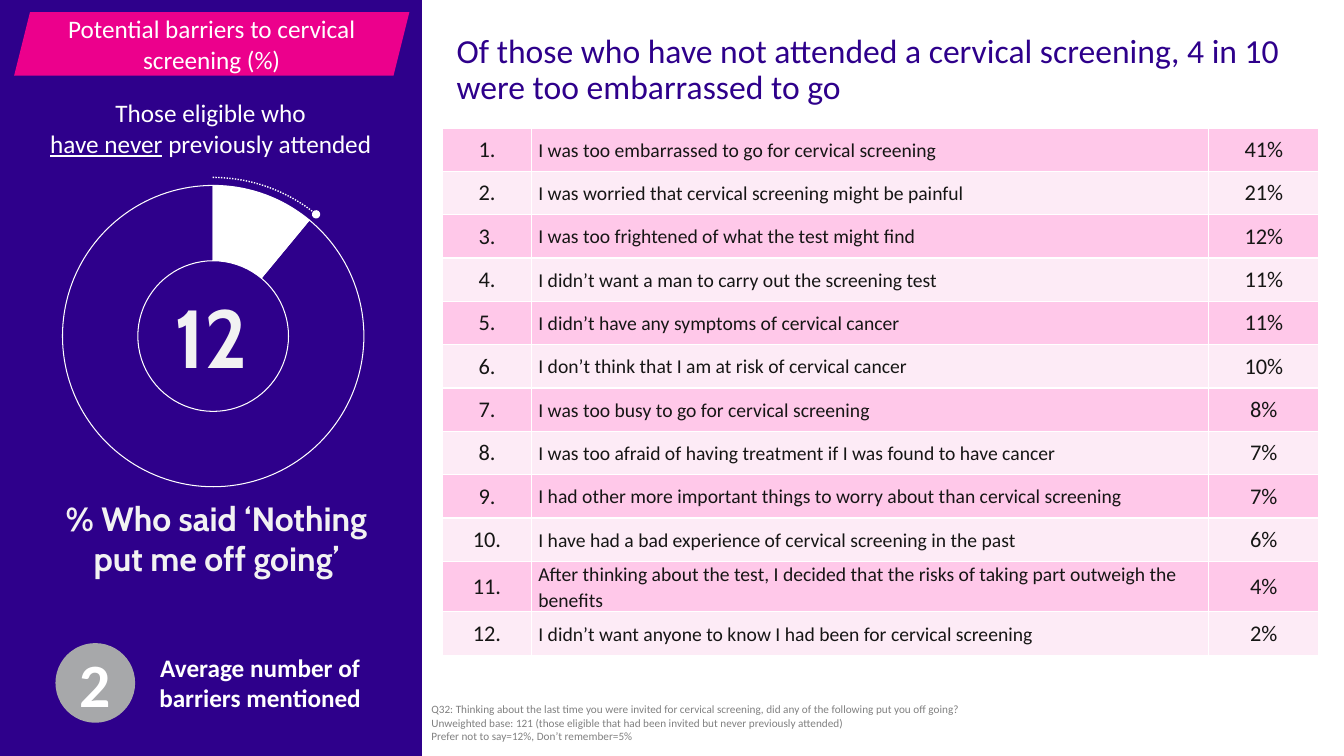
from lxml import etree
from pptx import Presentation
from pptx.chart.data import CategoryChartData
from pptx.dml.color import RGBColor
from pptx.enum.chart import XL_CHART_TYPE
from pptx.enum.dml import MSO_LINE
from pptx.enum.shapes import MSO_SHAPE
from pptx.enum.text import MSO_ANCHOR, MSO_AUTO_SIZE, PP_ALIGN
from pptx.oxml import parse_xml
from pptx.oxml.ns import nsdecls, qn
from pptx.util import Inches, Pt

PURPLE, PINK, GREY, WHITE = "2E008B", "EC008C", "A7A8AA", "FFFFFF"
OFF_WHITE, INK, NOTE_GREY = "F2F2F2", "161615", "808080"
ROW_FILLS = ["FFC8E9", "FDEBF6"]

TITLE = "Of those who have not attended a cervical screening, 4 in 10 were too embarrassed to go"
NOTES = [
    "Q32: Thinking about the last time you were invited for cervical screening, did any of the following put you off going?",
    "Unweighted base: 121 (those eligible that had been invited but never previously attended)",
    "Prefer not to say=12%, Don’t remember=5%",
]
BARRIERS = [
    ("I was too embarrassed to go for cervical screening", "41%"),
    ("I was worried that cervical screening might be painful", "21%"),
    ("I was too frightened of what the test might find", "12%"),
    ("I didn’t want a man to carry out the screening test", "11%"),
    ("I didn’t have any symptoms of cervical cancer", "11%"),
    ("I don’t think that I am at risk of cervical cancer", "10%"),
    ("I was too busy to go for cervical screening", "8%"),
    ("I was too afraid of having treatment if I was found to have cancer", "7%"),
    ("I had other more important things to worry about than cervical screening", "7%"),
    ("I have had a bad experience of cervical screening in the past", "6%"),
    ("After thinking about the test, I decided that the risks of taking part outweigh the benefits", "4%"),
    ("I didn’t want anyone to know I had been for cervical screening", "2%"),
]
COLUMN_WIDTHS = [0.88, 6.72, 1.09]
ROW_HEIGHT, TALL_ROW_HEIGHT, TALL_ROW = 0.43, 0.5, 10
PUT_OFF = [("1", 11), ("2", 89)]
RING_LAYOUT = {"x": 0.1, "y": 0.04, "w": 0.8, "h": 0.92}


def rgb(value):
    return RGBColor.from_string(value)


def box(bounds):
    return [Inches(length) for length in bounds]


def style(frame, size, color, align=PP_ALIGN.LEFT, font="Calibri", bold=False):
    for paragraph in frame.paragraphs:
        paragraph.alignment = align
        for run in paragraph.runs:
            run.font.size = Pt(size)
            run.font.name = font
            run.font.bold = bold
            run.font.color.rgb = rgb(color)


def add_text(slide, bounds, text, size, color, **options):
    frame = slide.shapes.add_textbox(*box(bounds)).text_frame
    frame.word_wrap = True
    frame.auto_size = MSO_AUTO_SIZE.SHAPE_TO_FIT_TEXT
    frame.text = text
    style(frame, size, color, **options)
    return frame


def add_block(slide, kind, bounds, fill, outline=None):
    block = slide.shapes.add_shape(kind, *box(bounds))
    block.shadow.inherit = False
    if fill:
        block.fill.solid()
        block.fill.fore_color.rgb = rgb(fill)
    else:
        block.fill.background()
    if outline:
        block.line.color.rgb = rgb(outline)
        block.line.width = Pt(1)
    else:
        block.line.fill.background()
    block.text_frame.vertical_anchor = MSO_ANCHOR.MIDDLE
    return block


def add_ring(slide, bounds):
    data = CategoryChartData()
    data.categories = [name for name, _ in PUT_OFF]
    data.add_series("Series 1", [share for _, share in PUT_OFF])
    chart = slide.shapes.add_chart(XL_CHART_TYPE.DOUGHNUT, *box(bounds), data).chart
    chart.has_legend = False
    chart.has_title = False
    chart.font.size = Pt(10)
    chart.font.name = "Calibri"
    chart.font.color.rgb = rgb("58595B")
    series = chart.plots[0].series[0]
    for index in range(len(PUT_OFF)):
        part = series.points[index].format
        part.line.color.rgb = rgb(WHITE)
        part.line.width = Pt(0.75)
        if index == 0:
            part.fill.solid()
            part.fill.fore_color.rgb = rgb(WHITE)
        else:
            part.fill.background()
    plot_area = chart.plots[0]._element.getparent()
    for layout in plot_area.findall(qn("c:layout")):
        plot_area.remove(layout)
    sizes = "".join(f'<c:{side} val="{share}"/>' for side, share in RING_LAYOUT.items())
    plot_area.insert(0, parse_xml(
        f'<c:layout {nsdecls("c")}><c:manualLayout><c:layoutTarget val="inner"/>'
        f'<c:xMode val="edge"/><c:yMode val="edge"/>{sizes}</c:manualLayout></c:layout>'))


def add_borders(cell):
    properties = cell._tc.get_or_add_tcPr()
    for side in ("lnL", "lnR", "lnT", "lnB"):
        properties.append(parse_xml(
            f'<a:{side} {nsdecls("a")} w="12700"><a:solidFill>'
            f'<a:srgbClr val="{WHITE}"/></a:solidFill></a:{side}>'))


def add_barriers(slide, left, top):
    heights = [TALL_ROW_HEIGHT if i == TALL_ROW else ROW_HEIGHT for i in range(len(BARRIERS))]
    bounds = (left, top, sum(COLUMN_WIDTHS), sum(heights))
    table = slide.shapes.add_table(len(heights), len(COLUMN_WIDTHS), *box(bounds)).table
    table.first_row = False
    table.horz_banding = False
    for column, width in zip(table.columns, COLUMN_WIDTHS):
        column.width = Inches(width)
    for i, (reason, share) in enumerate(BARRIERS):
        table.rows[i].height = Inches(heights[i])
        for j, text in enumerate((f"{i + 1}.", reason, share)):
            cell = table.cell(i, j)
            add_borders(cell)
            cell.fill.solid()
            cell.fill.fore_color.rgb = rgb(ROW_FILLS[i % 2])
            cell.vertical_anchor = MSO_ANCHOR.MIDDLE
            cell.text_frame.text = text
            if j == 1:
                cell.margin_left = cell.margin_right = Inches(0.07)
                cell.margin_top = cell.margin_bottom = 0
                cell.text_frame.paragraphs[0].line_spacing = 1.07
                style(cell.text_frame, 14, INK)
            else:
                style(cell.text_frame, 16, INK, PP_ALIGN.CENTER)


def main():
    deck = Presentation()
    deck.slide_width, deck.slide_height = Inches(13.33), Inches(7.5)
    slide = deck.slides.add_slide(deck.slide_layouts[5])
    center = PP_ALIGN.CENTER

    add_block(slide, MSO_SHAPE.RECTANGLE, (0, 0, 4.18, 7.5), PURPLE, PURPLE)
    add_text(slide, (4.18, 6.92, 9.1, 0.5), "\n".join(NOTES), 8, NOTE_GREY)

    add_ring(slide, (0.24, 1.71, 3.75, 3.25))
    arc = add_block(slide, MSO_SHAPE.ARC, (0.51, 1.76, 3.2, 3.15), None, WHITE)
    arc.adjustments[0], arc.adjustments[1] = 162, 186.19
    arc.line.dash_style = MSO_LINE.ROUND_DOT
    etree.SubElement(arc.line._get_or_add_ln(), qn("a:tailEnd"), type="oval")

    add_text(slide, (0.44, 4.89, 3.41, 1.31), "% Who said ‘Nothing put me off going’",
             24, OFF_WHITE, align=center, font="Cabin", bold=True)
    add_text(slide, (1.4, 2.79, 1.39, 1.09), "12",
             58.7, OFF_WHITE, align=center, font="Cabin", bold=True)

    banner = add_block(slide, MSO_SHAPE.PARALLELOGRAM, (0.14, 0.12, 3.92, 0.63), PINK)
    frame = banner.text_frame
    frame.margin_left = frame.margin_right = Inches(0.13)
    frame.margin_top = frame.margin_bottom = Inches(0.07)
    frame.text = "Potential barriers to cervical screening (%)"
    style(frame, 18, WHITE, center)

    add_barriers(slide, 4.39, 1.27)

    title = slide.shapes.title
    title.left, title.top, title.width, title.height = box((4.43, 0.29, 8.6, 0.82))
    title.text_frame.text = TITLE
    title.text_frame.auto_size = MSO_AUTO_SIZE.NONE
    title.text_frame.vertical_anchor = MSO_ANCHOR.MIDDLE
    title.text_frame.paragraphs[0].line_spacing = 0.9
    style(title.text_frame, 24, PURPLE)

    eligible = add_text(slide, (0.19, 0.92, 3.8, 0.71), "Those eligible who\nhave never", 18, WHITE)
    never = eligible.paragraphs[1]
    never.runs[0].font.underline = True
    never.add_run().text = " previously attended"
    style(eligible, 18, WHITE, center)

    average = add_block(slide, MSO_SHAPE.OVAL, (0.55, 6.38, 0.79, 0.79), GREY)
    average.text_frame.text = "2"
    style(average.text_frame, 44, WHITE, center, bold=True)
    add_text(slide, (1.34, 6.42, 2.48, 0.71), "Average number of barriers mentioned",
             18, WHITE, align=center, bold=True)

    deck.save("out.pptx")


if __name__ == "__main__":
    main()
